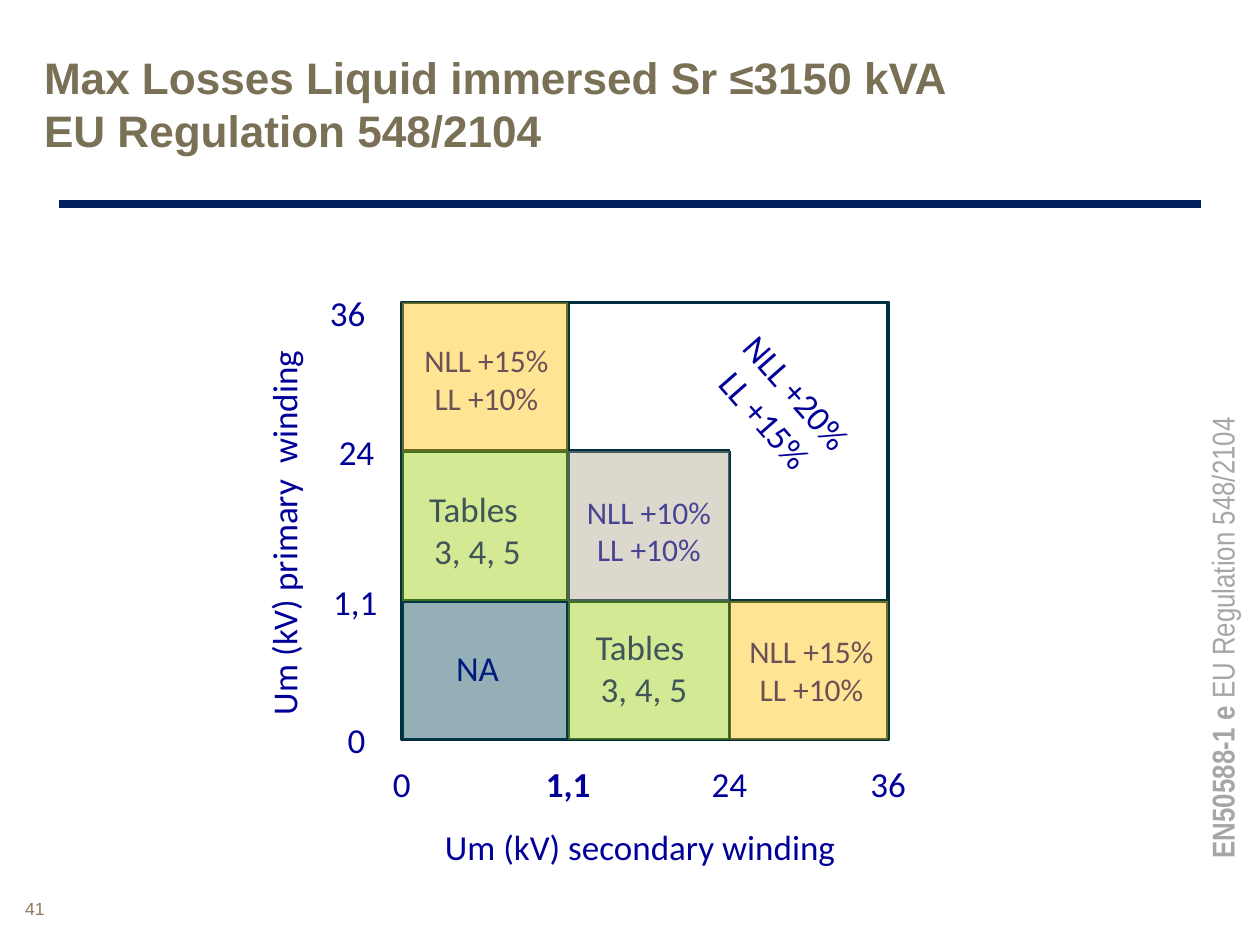
from dataclasses import dataclass

from lxml.etree import SubElement
from pptx import Presentation
from pptx.dml.color import RGBColor
from pptx.enum.shapes import MSO_CONNECTOR as Connector, MSO_SHAPE as Shape
from pptx.enum.text import MSO_ANCHOR as Anchor, PP_ALIGN as Align
from pptx.oxml.ns import qn
from pptx.util import Inches, Pt


@dataclass(frozen=True)
class Theme:
    navy: str = "000099"
    rule: str = "002060"
    title: str = "797056"
    grid: str = "00303D"
    sidebar: str = "A6A6A6"
    page: str = "91785B"
    slate: str = "004153"
    green: str = "99CC00"
    stone: str = "ACA48B"
    amber: str = "FFC000"
    title_size: float = 25.2
    label_size: float = 20
    loss_size: float = 18
    page_size: float = 10
    heading_font: str = "Arial"
    label_font: str = "Calibri"
    sidebar_font: str = "Arial Narrow"


THEME = Theme()
COLUMNS = (3.19, 4.51, 5.79, 7.05)
ROWS = (2.4, 3.58, 4.77, 5.87)
TABLES = ("Tables ", "3, 4, 5")
LOSS_10 = ("NLL +10%", "LL +10%")
LOSS_15 = ("NLL +15%", "LL +10%")
LOSS_20 = ("NLL +20%", "LL +15%")


def apply_format(target, values):
    for name, value in values.items():
        setattr(target, name, value)


def add_text(slide, box, paragraphs, size, font, color, bold=False,
             align=Align.LEFT, anchor=Anchor.TOP, inset=True, rotation=0, wrap=True):
    holder = slide.shapes.add_textbox(*map(Inches, box))
    holder.rotation = rotation
    frame = holder.text_frame
    apply_format(frame, {"word_wrap": wrap, "vertical_anchor": anchor})
    if not inset:
        sides = ("left", "top", "right", "bottom")
        apply_format(frame, {f"margin_{side}": 0 for side in sides})
    for index, runs in enumerate(paragraphs):
        paragraph = frame.add_paragraph() if index else frame.paragraphs[0]
        paragraph.alignment = align
        for wording, emphasis in [(runs, bold)] if isinstance(runs, str) else runs:
            run = paragraph.add_run()
            run.text = wording
            apply_format(run.font, {"size": Pt(size), "name": font, "bold": emphasis})
            run.font.color.rgb = RGBColor.from_string(color)


def add_label(slide, center, width, lines, size=THEME.label_size,
              height=0.51, bold=False, rotation=0):
    x, y = center
    add_text(slide, (x - width / 2, y - height / 2, width, height), lines, size,
             THEME.label_font, THEME.navy, bold, Align.CENTER, Anchor.MIDDLE,
             rotation=rotation, wrap=False)


def add_line(slide, start, end, color, weight):
    line = slide.shapes.add_connector(Connector.STRAIGHT, *map(Inches, start + end))
    line.line.color.rgb = RGBColor.from_string(color)
    line.line.width = Pt(weight)
    SubElement(line._element.spPr, qn("a:effectLst"))


def add_outline(slide):
    left, top = COLUMNS[0], ROWS[0]
    size = (COLUMNS[-1] - left, ROWS[-1] - top)
    outline = slide.shapes.add_shape(Shape.RECTANGLE, *map(Inches, (left, top) + size))
    outline.shadow.inherit = False
    outline.fill.background()
    outline.line.color.rgb = RGBColor.from_string(THEME.grid)
    outline.line.width = Pt(2)


def add_tint(slide, column, row, color):
    left, top = COLUMNS[column], ROWS[row]
    size = (COLUMNS[column + 1] - left, ROWS[row + 1] - top)
    tint = slide.shapes.add_shape(Shape.RECTANGLE, *map(Inches, (left, top) + size))
    tint.shadow.inherit = False
    tint.line.fill.background()
    tint.fill.solid()
    tint.fill.fore_color.rgb = RGBColor.from_string(color)
    shade = tint._element.spPr.find(qn("a:solidFill"))[0]
    SubElement(shade, qn("a:alpha"), val="42000")


def add_matrix(slide):
    left, inner, middle, right = COLUMNS
    top, upper, lower, bottom = ROWS
    add_outline(slide)
    for start, end in (
        ((left, upper), (middle, upper)),
        ((left, lower), (right, lower)),
        ((inner, top), (inner, bottom)),
        ((middle, bottom), (middle, upper)),
    ):
        add_line(slide, start, end, THEME.grid, 2)

    for center, lines, size in (
        ((3.79, 5.3), ("NA",), THEME.label_size),
        ((3.79, 4.2), TABLES, THEME.label_size),
        ((5.11, 5.3), TABLES, THEME.label_size),
        ((5.15, 4.21), LOSS_10, THEME.loss_size),
        ((3.86, 3.01), LOSS_15, THEME.loss_size),
        ((6.44, 5.32), LOSS_15, THEME.loss_size),
    ):
        add_label(slide, center, 1.21, lines, size, height=0.94)
    add_label(slide, (6.2, 3.22), 1.84, LOSS_20, height=0.94, rotation=48.8)

    for column, row, color in (
        (0, 2, THEME.slate),
        (0, 1, THEME.green),
        (1, 2, THEME.green),
        (1, 1, THEME.stone),
        (0, 0, THEME.amber),
        (2, 2, THEME.amber),
    ):
        add_tint(slide, column, row, color)


def add_axes(slide):
    add_label(slide, (5.08, 6.72), 4.88, ("Um (kV) secondary winding",))
    add_label(slide, (2.25, 4.23), 3.91, ("Um (kV) primary  winding",), rotation=270)
    for x, voltage in zip(COLUMNS, ("0", "1,1", "24", "36")):
        add_label(slide, (x, 6.22), 1.26, (voltage,), bold=voltage == "1,1")
    for center, voltage in (
        ((2.76, 2.48), "36"),
        ((2.83, 3.58), "24"),
        ((2.82, 4.77), "1,1"),
        ((2.83, 5.87), "0"),
    ):
        add_label(slide, center, 0.63, (voltage,))


def main():
    deck = Presentation()
    apply_format(deck, {"slide_width": Inches(10), "slide_height": Inches(7.5)})
    slide = deck.slides.add_slide(deck.slide_layouts[6])
    add_line(slide, (0.47, 1.62), (9.53, 1.62), THEME.rule, 5)
    add_text(slide, (0.35, 0.4, 9.53, 0.71),
             ("Max Losses Liquid immersed Sr ≤3150 kVA", "EU Regulation 548/2104"),
             THEME.title_size, THEME.heading_font, THEME.title, bold=True, inset=False)
    add_axes(slide)
    add_matrix(slide)
    add_text(slide, (0.2, 7.13, 0.47, 0.4), ("41",), THEME.page_size,
             THEME.heading_font, THEME.page, inset=False)
    add_text(slide, (7.37, 4.41, 4.63, 0.37),
             ((("EN50588-1 e ", True), ("EU Regulation 548/2104", False)),),
             THEME.loss_size, THEME.sidebar_font, THEME.sidebar, rotation=270)
    deck.save("out.pptx")


if __name__ == "__main__":
    main()
